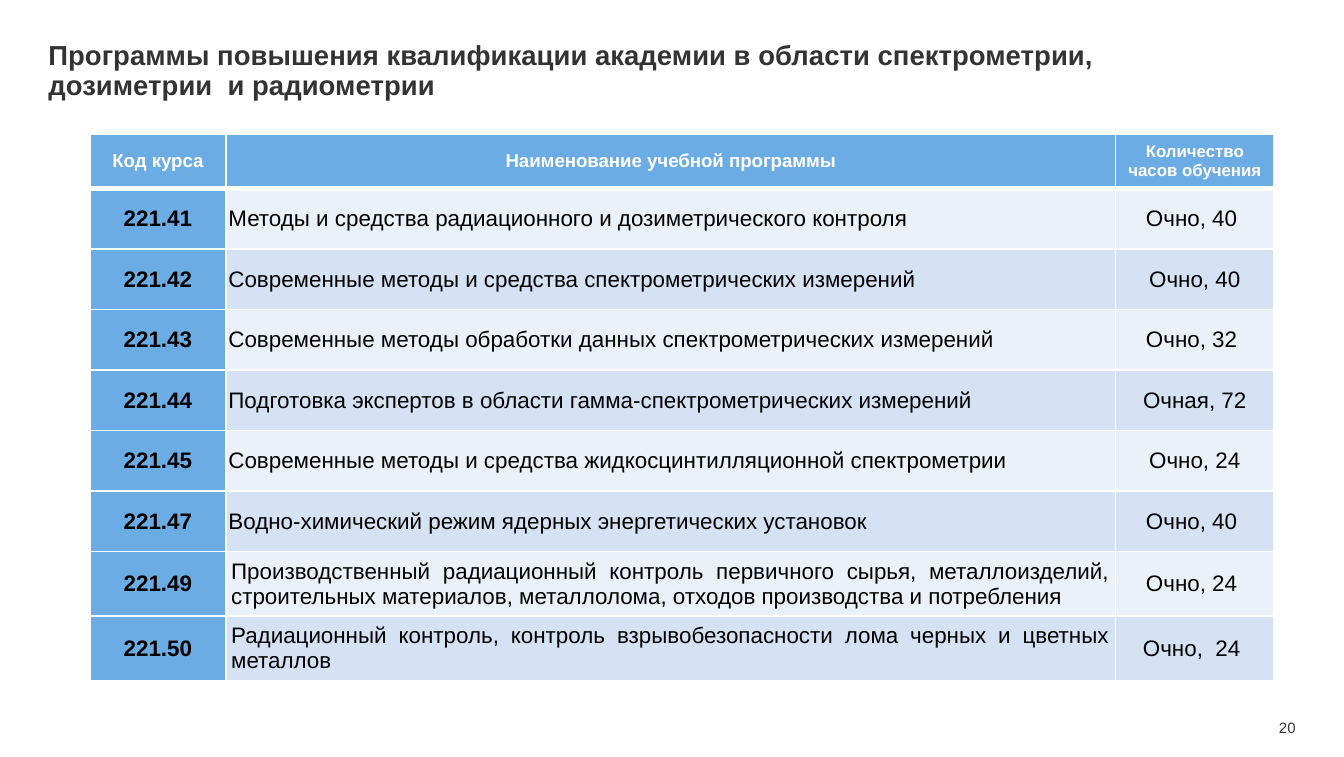
from lxml import etree
from pptx import Presentation
from pptx.dml.color import RGBColor
from pptx.enum.text import MSO_ANCHOR, PP_ALIGN
from pptx.oxml.ns import qn
from pptx.util import Inches, Pt

CENTER, JUSTIFY, LEFT, RIGHT = PP_ALIGN.CENTER, PP_ALIGN.JUSTIFY, PP_ALIGN.LEFT, PP_ALIGN.RIGHT
TOP, MIDDLE = MSO_ANCHOR.TOP, MSO_ANCHOR.MIDDLE

WIDTH, HEIGHT = 10, 5.63
WHITE, BLACK, GRAY, BLUE = "FFFFFF", "000000", "333333", "6CACE4"
BANDS = ("EAF1F9", "D4E2F4")
THIN, THICK = 0.96, 3

TITLE = "Программы повышения квалификации академии в области спектрометрии, дозиметрии  и радиометрии"
HEADERS = ("Код курса", "Наименование учебной программы", "Количество часов обучения")
HEADER_SIZES = (10, 10, 9)
COURSES = (
    ("221.41", "Методы и средства радиационного и дозиметрического контроля", "Очно, 40 "),
    ("221.42", "Современные методы и средства спектрометрических измерений", "Очно, 40"),
    ("221.43", "Современные методы обработки данных спектрометрических измерений", "Очно, 32 "),
    ("221.44", "Подготовка экспертов в области гамма-спектрометрических измерений", "Очная, 72"),
    ("221.45", "Современные методы и средства жидкосцинтилляционной спектрометрии", "Очно, 24"),
    ("221.47", "Водно-химический режим ядерных энергетических установок", "Очно, 40 "),
    ("221.49", "Производственный радиационный контроль первичного сырья, металлоизделий, "
               "строительных материалов, металлолома, отходов производства и потребления", "Очно, 24 "),
    ("221.50", "Радиационный контроль, контроль взрывобезопасности лома черных и цветных металлов",
     "Очно,  24 "),
)
COLUMN_WIDTHS = (1.01, 6.62, 1.18)
COLUMN_ALIGNMENTS = (CENTER, JUSTIFY, CENTER)
HEADER_HEIGHT, COURSE_HEIGHT = 0.35, 0.45
HEADER_MARGINS, ONE_LINE_MARGINS, TWO_LINE_MARGINS = (0.06, 0.05), (0.02, 0), (0.04, 0.04)
TWO_LINE_CODES = ("221.49", "221.50")


def color(hex_string):
    return RGBColor.from_string(hex_string)


def set_margins(holder, horizontal, vertical):
    """Set the text margins of a cell or a text frame, in inches."""
    margins = {"margin_left": horizontal, "margin_right": horizontal,
               "margin_top": vertical, "margin_bottom": vertical}
    for name, value in margins.items():
        setattr(holder, name, Inches(value))


def write(frame, text, size, ink, alignment, bold=False):
    paragraph = frame.paragraphs[0]
    paragraph.alignment = alignment
    run = paragraph.add_run()
    run.text = text
    for name, value in {"name": "Arial", "size": Pt(size), "bold": bold}.items():
        setattr(run.font, name, value)
    run.font.color.rgb = color(ink)
    return paragraph


def add_text(slide, box, anchor, *text_format):
    """Add a text box without margins; box holds shares of the slide's size."""
    left, top, width, height = box
    shape = slide.shapes.add_textbox(Inches(left * WIDTH), Inches(top * HEIGHT),
                                     Inches(width * WIDTH), Inches(height * HEIGHT))
    frame = shape.text_frame
    frame.word_wrap = True
    frame.vertical_anchor = anchor
    set_margins(frame, 0, 0)
    return write(frame, *text_format)


def set_borders(cell, top, bottom):
    """Draw white borders; top and bottom are widths in points."""
    properties = cell._tc.get_or_add_tcPr()
    widths = {"a:lnL": THIN, "a:lnR": THIN, "a:lnT": top, "a:lnB": bottom}
    for tag, width in widths.items():
        line = etree.SubElement(properties, qn(tag), w=str(Pt(width)))
        fill = etree.SubElement(line, qn("a:solidFill"))
        etree.SubElement(fill, qn("a:srgbClr"), val=WHITE)


def format_cell(cell, background, margins, top, bottom):
    set_borders(cell, top, bottom)
    cell.fill.solid()
    cell.fill.fore_color.rgb = color(background)
    cell.vertical_anchor = MIDDLE
    set_margins(cell, *margins)


def fill_header(table):
    for column, (text, size) in enumerate(zip(HEADERS, HEADER_SIZES)):
        cell = table.cell(0, column)
        format_cell(cell, BLUE, HEADER_MARGINS, THIN, THICK)
        write(cell.text_frame, text, size, WHITE, CENTER, True)


def fill_course(table, row, course):
    margins = TWO_LINE_MARGINS if course[0] in TWO_LINE_CODES else ONE_LINE_MARGINS
    for column, (text, alignment) in enumerate(zip(course, COLUMN_ALIGNMENTS)):
        cell = table.cell(row, column)
        is_code = column == 0
        background = BLUE if is_code else BANDS[(row - 1) % 2]
        format_cell(cell, background, margins, THICK if row == 1 else THIN, THIN)
        write(cell.text_frame, text, 12, BLACK, alignment, is_code)


def add_course_table(slide):
    heights = [HEADER_HEIGHT] + [COURSE_HEIGHT] * len(COURSES)
    table = slide.shapes.add_table(len(heights), len(COLUMN_WIDTHS), Inches(0.67), Inches(1),
                                   Inches(sum(COLUMN_WIDTHS)), Inches(sum(heights))).table
    for column, width in zip(table.columns, COLUMN_WIDTHS):
        column.width = Inches(width)
    for row, height in zip(table.rows, heights):
        row.height = Inches(height)
    fill_header(table)
    for row, course in enumerate(COURSES, start=1):
        fill_course(table, row, course)


def main():
    presentation = Presentation()
    presentation.slide_width = Inches(WIDTH)
    presentation.slide_height = Inches(HEIGHT)
    slide = presentation.slides.add_slide(presentation.slide_layouts[6])

    title = add_text(slide, (0.036, 0.055, 0.809, 0.04), TOP, TITLE, 14.7, GRAY, LEFT, True)
    title.line_spacing = 0.9
    add_course_table(slide)
    add_text(slide, (0.893, 0.95, 0.071, 0.023), MIDDLE, "20", 8, GRAY, RIGHT)

    presentation.save("out.pptx")


if __name__ == "__main__":
    main()
